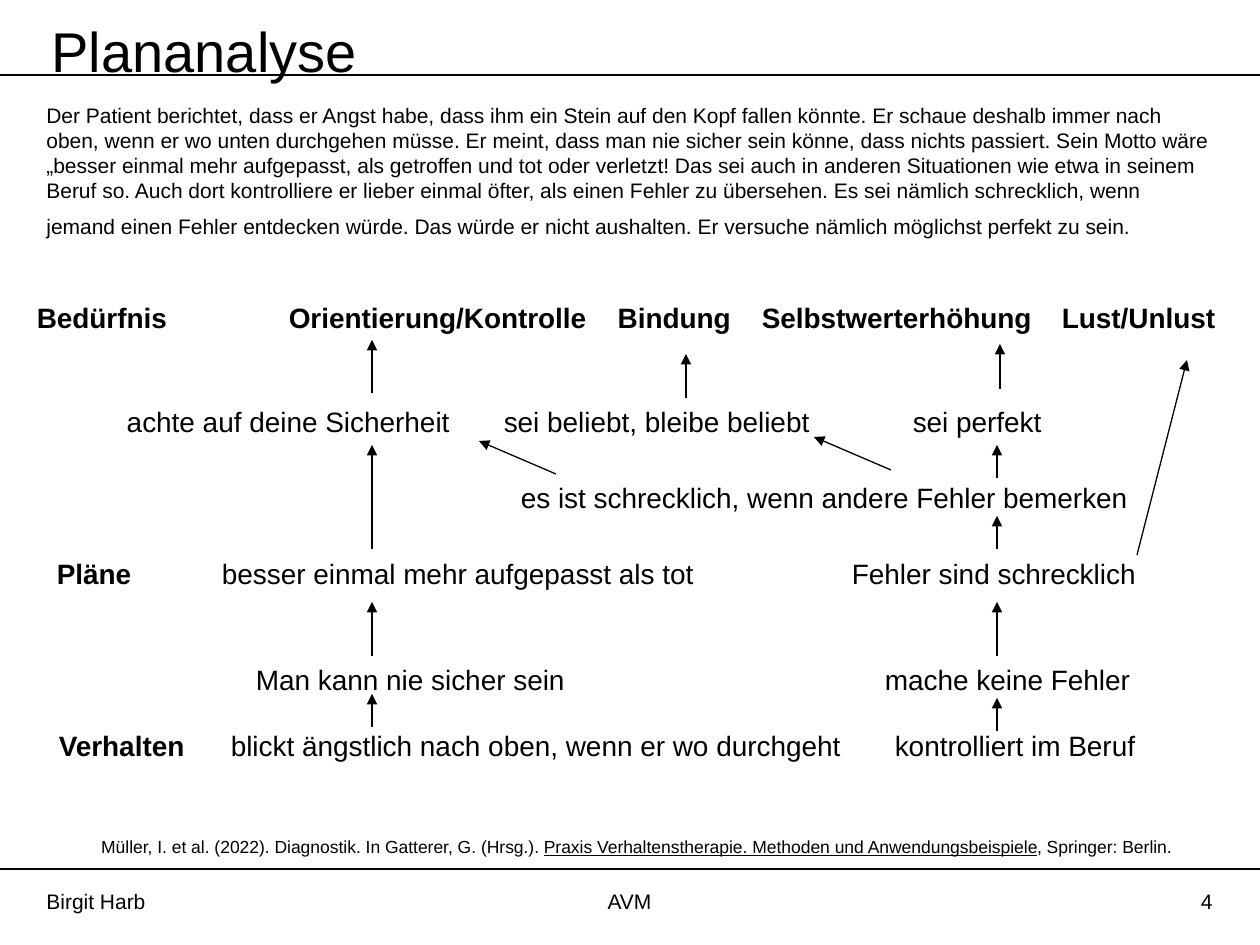
from dataclasses import dataclass
from lxml.etree import SubElement
from pptx import Presentation
from pptx.dml.color import RGBColor as Rgb
from pptx.enum.shapes import MSO_CONNECTOR as Conn
from pptx.enum.text import MSO_ANCHOR as Anchor, MSO_AUTO_SIZE as Fit, PP_ALIGN as Align
from pptx.oxml.ns import qn
from pptx.util import Emu, Pt


@dataclass(frozen=True)
class Theme:
    ink: Rgb = Rgb(0, 0, 0)
    face: str = "Arial"
    title: int = 32
    plan: int = 16
    body: int = 12
    cite: int = 10
    line: float = 0.75


THEME = Theme()
WIDE, HIGH = 1260, 945
PAD = 12.6

STORY = [
    "Der Patient berichtet, dass er Angst habe, dass ihm ein Stein auf den Kopf fallen könnte. "
    "Er schaue deshalb immer nach oben, wenn er wo unten durchgehen müsse. Er meint, dass man nie "
    "sicher sein könne, dass nichts passiert. Sein Motto wäre „besser einmal mehr aufgepasst, als "
    "getroffen und tot oder verletzt! Das sei auch in anderen Situationen wie etwa in seinem Beruf "
    "so. Auch dort kontrolliere er lieber einmal öfter, als einen Fehler zu übersehen. Es sei "
    "nämlich schrecklich, wenn",
    "jemand einen Fehler entdecken würde. Das würde er nicht aushalten. Er versuche nämlich "
    "möglichst perfekt zu sein.",
]
BOLD = {"bold": True}
# Each row: top, then its phrases as (left edge of text, wording, format)
ROWS = [
    (294, [(37, "Bedürfnis", BOLD), (289, "Orientierung/Kontrolle", BOLD), (618, "Bindung", BOLD),
           (762, "Selbstwerterhöhung", BOLD), (1062, "Lust/Unlust", BOLD)]),
    (398, [(127, "achte auf deine Sicherheit", {}), (504, "sei beliebt, bleibe beliebt", {}),
           (913, "sei perfekt", {})]),
    (474, [(521, "es ist schrecklich, wenn andere Fehler bemerken", {})]),
    (550, [(57, "Pläne", BOLD), (222, "besser einmal mehr aufgepasst als tot", {}),
           (852, "Fehler sind schrecklich", {})]),
    (656, [(256, "Man kann nie sicher sein", {}), (885, "mache keine Fehler", {})]),
    (722, [(59, "Verhalten", BOLD), (231, "blickt ängstlich nach oben, wenn er wo durchgeht", {}),
           (895, "kontrolliert im Beruf", {})]),
]
# Upright arrows: x, with (start, end) heights
RISES = {
    372: [(727, 694), (656, 602), (549, 445), (393, 340)],
    686: [(398, 354)],
    997: [(731, 698), (656, 602), (549, 516), (478, 445)],
    1000: [(389, 344)],
}
SLANTS = [(891, 470, 814, 437), (556, 474, 479, 441), (1137, 555, 1187, 360)]


def px(n):
    return Emu(round(n * 914400 / 126))


def put(thing, form):
    for name, value in form.items():
        setattr(thing, name, value)


def write(para, text, size, form=None):
    run = para.add_run()
    run.text = text
    put(run.font, {"name": THEME.face, "size": Pt(size), **(form or {})})
    run.font.color.rgb = THEME.ink


def text_box(slide, box, **form):
    frame = slide.shapes.add_textbox(*map(px, box)).text_frame
    put(frame, {"word_wrap": True, "auto_size": Fit.NONE, **form})
    return frame


def draw_line(slide, x1, y1, x2, y2, head=False):
    link = slide.shapes.add_connector(Conn.STRAIGHT, px(x1), px(y1), px(x2), px(y2))
    link.line.color.rgb = THEME.ink
    link.line.width = Pt(THEME.line)
    if head:
        SubElement(link.line._get_or_add_ln(), qn("a:tailEnd"), type="triangle")
    SubElement(link._element.spPr, qn("a:effectLst"))


def add_title(slide, box):
    shape = slide.shapes.title
    put(shape, dict(zip(("left", "top", "width", "height"), map(px, box))))
    frame = shape.text_frame
    put(frame, {"word_wrap": True, "auto_size": Fit.NONE, "vertical_anchor": Anchor.TOP})
    para = frame.paragraphs[0]
    para.alignment = Align.LEFT
    write(para, "Plananalyse", THEME.title)


def add_story(slide, box):
    frame = text_box(slide, box)
    first, last = frame.paragraphs[0], frame.add_paragraph()
    last.space_before = Pt(6)
    for para, text in zip((first, last), STORY):
        write(para, text, THEME.body)


def add_row(slide, top, parts):
    """Set the phrases of one row in one box, spaced by tab stops."""
    start = parts[0][0]
    left = start - PAD
    para = text_box(slide, (left, top, WIDE - left, 47)).paragraphs[0]
    if len(parts) > 1:
        tabs = SubElement(para._p.get_or_add_pPr(), qn("a:tabLst"))
        for x, _, _ in parts[1:]:
            SubElement(tabs, qn("a:tab"), pos=str(px(x - start)), algn="l")
    for i, (_, text, form) in enumerate(parts):
        write(para, "\t" + text if i else text, THEME.plan, form)


def add_plan(slide):
    for top, parts in ROWS:
        add_row(slide, top, parts)
    for x, spans in RISES.items():
        for start, end in spans:
            draw_line(slide, x, start, x, end, head=True)
    for ends in SLANTS:
        draw_line(slide, *ends, head=True)


def add_source(slide, box):
    para = text_box(slide, box).paragraphs[0]
    para.alignment = Align.CENTER
    for text, form in (
        ("Müller, I. et al. (2022). Diagnostik. In Gatterer, G. (Hrsg.). ", {}),
        ("Praxis Verhaltenstherapie. Methoden und Anwendungsbeispiele", {"underline": True}),
        (", Springer: Berlin.", {}),
    ):
        write(para, text, THEME.cite, form)


def add_footer(slide, box):
    left, top, width, height = box
    side, mid = 294, 400
    for x, wide, text, align in (
        (left, side, "Birgit Harb", Align.LEFT),
        (left + (width - mid) / 2, mid, "AVM", Align.CENTER),
        (left + width - side, side, "4", Align.RIGHT),
    ):
        frame = text_box(slide, (x, top, wide, height), vertical_anchor=Anchor.MIDDLE)
        para = frame.paragraphs[0]
        para.alignment = align
        write(para, text, THEME.body)


def main():
    deck = Presentation()
    put(deck, {"slide_width": px(WIDE), "slide_height": px(HIGH)})
    slide = deck.slides.add_slide(deck.slide_layouts[5])
    for y in (75, 869):
        draw_line(slide, 0, y, WIDE, y)
    add_title(slide, (39, 10, 471, 81))
    add_story(slide, (34, 96, 1191, 152))
    add_plan(slide)
    add_source(slide, (43, 830, 1187, 34))
    add_footer(slide, (34, 876, 1191, 50))
    deck.save("out.pptx")


if __name__ == "__main__":
    main()
